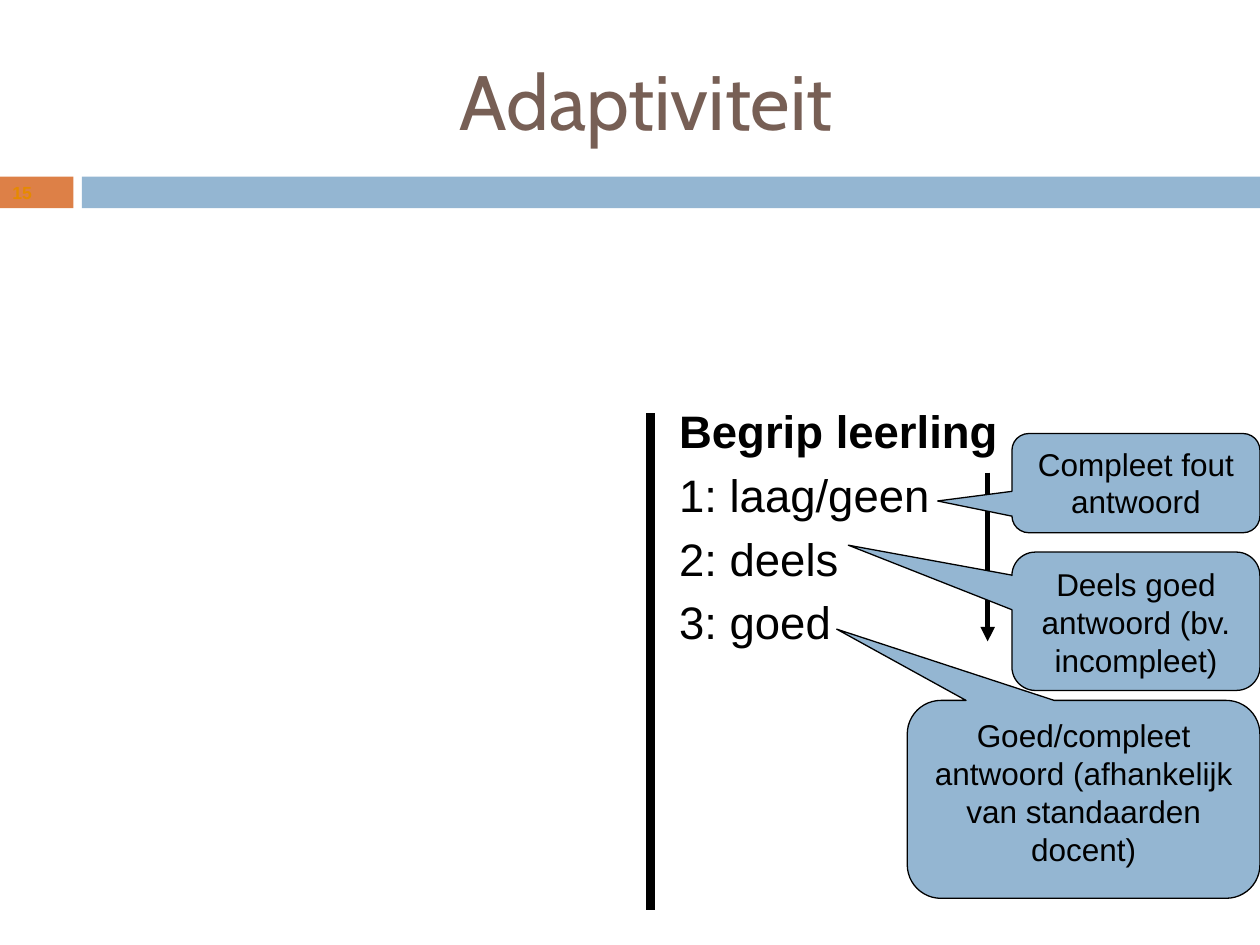
import pptx
import pptx.util
import pptx.dml.color
import pptx.enum.shapes
import pptx.enum.text
import pptx.oxml.ns
from lxml import etree
from pptx.util import Cm, Pt

TITLE = "Adaptiviteit"
SLIDE_NUMBER = "15"
LEVELS = ["Begrip leerling", "1: laag/geen", "2: deels", "3: goed"]
# text, left, top, width, height (cm), pointer adjustments
CALLOUTS = [
    ("Compleet fout antwoord", 20.4, 8.74, 5, 2, (-0.8, 0.18, 0.17)),
    ("Deels goed antwoord (bv. incompleet)", 20.4, 11.13, 5, 2.79,
     (-1.16, -0.55, 0.17)),
    ("Goed/compleet antwoord (afhankelijk van standaarden docent)",
     18.29, 14.12, 7.11, 3.99, (-0.7, -0.86, 0.17)),
]
# left, width (cm), fill
BANDS = [(0, 1.48, "DD8047"), (1.65, 23.75, "94B6D2")]
BAND_TOP, BAND_HEIGHT = 3.56, 0.64
BLACK, BLUE = "000000", "94B6D2"

SHAPES = pptx.enum.shapes.MSO_SHAPE
ALIGN = pptx.enum.text.PP_ALIGN
ANCHOR = pptx.enum.text.MSO_ANCHOR


def colour(hex_code):
    return pptx.dml.color.RGBColor.from_string(hex_code)


def place(part, left, top, width, height):
    part.left, part.top = Cm(left), Cm(top)
    part.width, part.height = Cm(width), Cm(height)


def style(paragraph, name, size, hex_code, bold=False):
    font = paragraph.font
    font.name, font.size, font.bold = name, Pt(size), bold
    font.color.rgb = colour(hex_code)


def add_filled(slide, preset, box, fill):
    part = slide.shapes.add_shape(preset, *map(Cm, box))
    part.shadow.inherit = False
    part.fill.solid()
    part.fill.fore_color.rgb = colour(fill)
    part.line.fill.background()
    return part


def add_vertical(slide, x, top, bottom, weight, arrow=False):
    line = slide.shapes.add_connector(
        pptx.enum.shapes.MSO_CONNECTOR.STRAIGHT,
        Cm(x), Cm(top), Cm(x), Cm(bottom))
    line.line.color.rgb = colour(BLACK)
    line.line.width = Pt(weight)
    if arrow:
        etree.SubElement(line.line._get_or_add_ln(),
                         pptx.oxml.ns.qn("a:tailEnd"), type="triangle")
    etree.SubElement(line._element.spPr, pptx.oxml.ns.qn("a:effectLst"))


def main():
    deck = pptx.Presentation()
    deck.slide_width, deck.slide_height = Cm(25.4), Cm(19.05)
    slide = deck.slides.add_slide(deck.slide_layouts[1])
    title, levels = slide.placeholders

    place(title, 1.7, 0.64, 22.66, 2.74)
    title.text_frame.text = TITLE
    style(title.text_frame.paragraphs[0], "Cabin", 44, "775F55")

    place(levels, 13.69, 8.13, 11.2, 5.79)
    frame = levels.text_frame
    frame.text = "\n".join(LEVELS)
    frame.auto_size = pptx.enum.text.MSO_AUTO_SIZE.NONE
    frame.margin_left = frame.margin_right = 0
    frame.margin_top = frame.margin_bottom = 0
    for index, paragraph in enumerate(frame.paragraphs):
        style(paragraph, "Arial", 26, BLACK, bold=index == 0)
        properties = paragraph._p.get_or_add_pPr()
        properties.insert(0, etree.Element(pptx.oxml.ns.qn("a:buNone")))

    bands = [add_filled(slide, SHAPES.RECTANGLE,
                        (left, BAND_TOP, width, BAND_HEIGHT), fill)
             for left, width, fill in BANDS]
    number = bands[0].text_frame
    number.text = SLIDE_NUMBER
    number.margin_top = number.margin_bottom = 0
    number.paragraphs[0].alignment = ALIGN.LEFT
    style(number.paragraphs[0], "Arial", 10, "E68A00", bold=True)

    add_vertical(slide, 19.91, 9.53, 12.93, 2.75, arrow=True)
    add_vertical(slide, 13.11, 8.33, 18.34, 4.75)

    for text, *box, pointer in CALLOUTS:
        callout = add_filled(slide, SHAPES.ROUNDED_RECTANGULAR_CALLOUT,
                             box, BLUE)
        callout.line.color.rgb = colour(BLACK)
        callout.line.width = Pt(0.75)
        for index, value in enumerate(pointer):
            callout.adjustments[index] = value
        callout.text_frame.text = text
        callout.text_frame.word_wrap = True
        callout.text_frame.vertical_anchor = ANCHOR.TOP
        paragraph = callout.text_frame.paragraphs[0]
        paragraph.alignment = ALIGN.CENTER
        style(paragraph, "Arial", 18, BLACK)

    deck.save("out.pptx")


if __name__ == "__main__":
    main()
